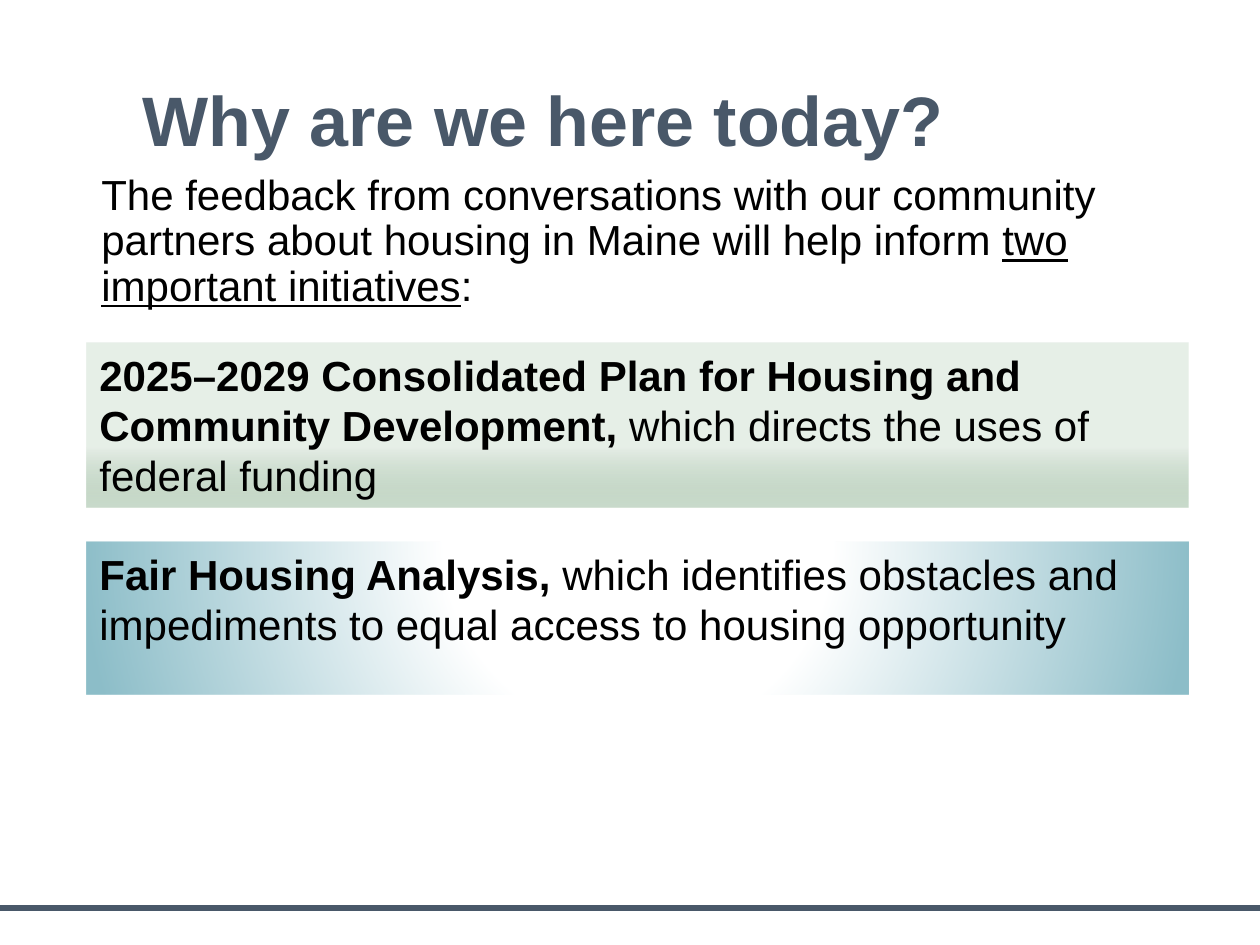
import pptx
import pptx.dml.color
import pptx.enum.shapes
import pptx.enum.text
import pptx.oxml
import pptx.oxml.ns
import pptx.util

PX = 9525 * 96 / 126
SLATE = "495869"
BLACK = "000000"
ALIGN = pptx.enum.text.PP_ALIGN
ANCHOR = pptx.enum.text.MSO_ANCHOR


def emu(*lengths):
    """Turn pixel lengths into EMU."""
    return [pptx.util.Emu(round(n * PX)) for n in lengths]


def rgb(value):
    """Return a colour from a hex string."""
    return pptx.dml.color.RGBColor.from_string(value)


def write(sp, *runs, size=24, color=BLACK, align=ALIGN.LEFT, anchor=ANCHOR.TOP, spacing=1.0):
    """Fill a shape with one paragraph of (text, font settings) runs."""
    tf = sp.text_frame
    tf.word_wrap = True
    tf.vertical_anchor = anchor
    p = tf.paragraphs[0]
    p.alignment = align
    p.line_spacing = spacing
    for text, settings in runs:
        r = p.add_run()
        r.text = text
        r.font.name = "Arial"
        r.font.size = pptx.util.Pt(size)
        r.font.color.rgb = rgb(color)
        for name, value in settings.items():
            setattr(r.font, name, value)


def text_box(s, box, *runs, **settings):
    """Add a text box."""
    write(s.shapes.add_textbox(*emu(*box)), *runs, **settings)


def gradient(sp, stops, shade):
    """Give a shape a gradient of (position, colour, opacity) stops."""
    marks = "".join(
        f'<a:gs pos="{pos * 1000}"><a:srgbClr val="{color}">'
        f'<a:alpha val="{opacity * 1000}"/></a:srgbClr></a:gs>'
        for pos, color, opacity in stops
    )
    ns = pptx.oxml.ns.nsdecls("a")
    fill = pptx.oxml.parse_xml(
        f'<a:gradFill {ns} rotWithShape="1"><a:gsLst>{marks}</a:gsLst>{shade}</a:gradFill>'
    )
    sp.fill.background()
    old = sp._element.spPr.find(pptx.oxml.ns.qn("a:noFill"))
    old.getparent().replace(old, fill)


def panel(s, box, stops, shade, *runs):
    """Add a gradient rectangle with text."""
    sp = s.shapes.add_shape(pptx.enum.shapes.MSO_SHAPE.RECTANGLE, *emu(*box))
    sp.shadow.inherit = False
    sp.line.fill.background()
    gradient(sp, stops, shade)
    write(sp, *runs)


def rule(s, x1, y1, x2, y2, color, width):
    """Add a straight line."""
    line = s.shapes.add_connector(
        pptx.enum.shapes.MSO_CONNECTOR.STRAIGHT, *emu(x1, y1, x2, y2)
    )
    line.line.color.rgb = rgb(color)
    line.line.width = pptx.util.Pt(width)
    effects = pptx.oxml.parse_xml(f'<a:effectLst {pptx.oxml.ns.nsdecls("a")}/>')
    line._element.spPr.append(effects)


def main():
    """Build the slide."""
    prs = pptx.Presentation()
    prs.slide_width, prs.slide_height = emu(1260, 945)
    s = prs.slides.add_slide(prs.slide_layouts[6])
    rule(s, 0, 908, 1260, 908, SLATE, 3)
    text_box(
        s, (0, 50, 1086, 147), ("Why are we here today?", {"bold": True}),
        size=40, color=SLATE, align=ALIGN.CENTER, anchor=ANCHOR.MIDDLE, spacing=0.9,
    )
    text_box(
        s, (89, 168, 1086, 163),
        ("The feedback from conversations with our community partners "
         "about housing in Maine will help inform ", {}),
        ("two important initiatives", {"underline": True}),
        (":", {}),
        spacing=0.9,
    )
    panel(
        s, (87, 343, 1101, 165),
        [(0, "8AAF8E", 20), (63, "8AAF8E", 20), (100, "CADBCC", 100)],
        '<a:lin ang="5400000" scaled="0"/>',
        ("2025–2029 Consolidated Plan for Housing and Community Development, ", {"bold": True}),
        ("which directs the uses of federal funding", {}),
    )
    panel(
        s, (87, 542, 1101, 153),
        [(0, "FFFFFF", 34), (35, "FFFFFF", 100), (100, "8CBDC8", 100)],
        '<a:path path="circle"><a:fillToRect l="50000" t="-80000" r="50000" b="180000"/></a:path>',
        ("Fair Housing Analysis, ", {"bold": True}),
        ("which identifies obstacles and impediments to equal access to housing opportunity", {}),
    )
    prs.save("out.pptx")


if __name__ == "__main__":
    main()
